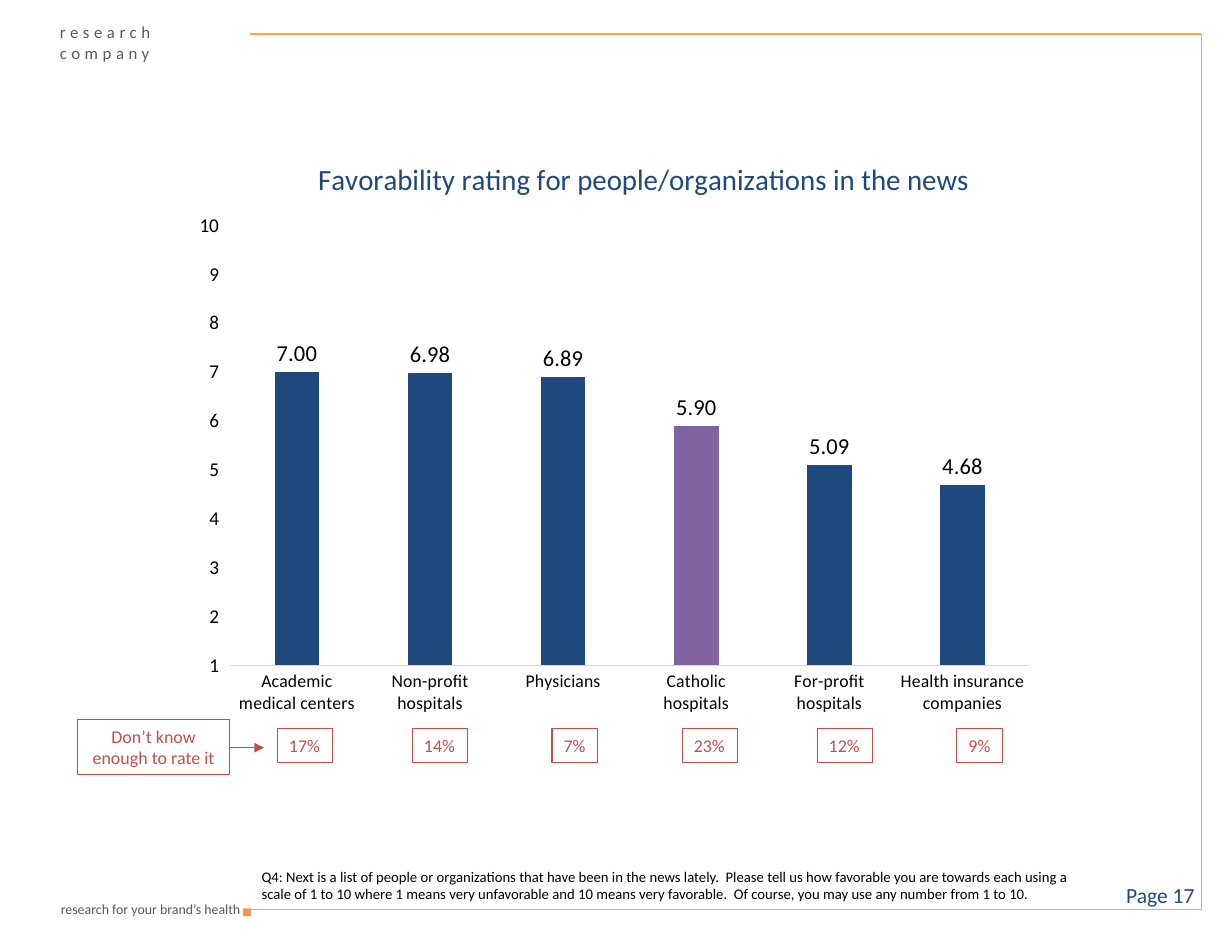
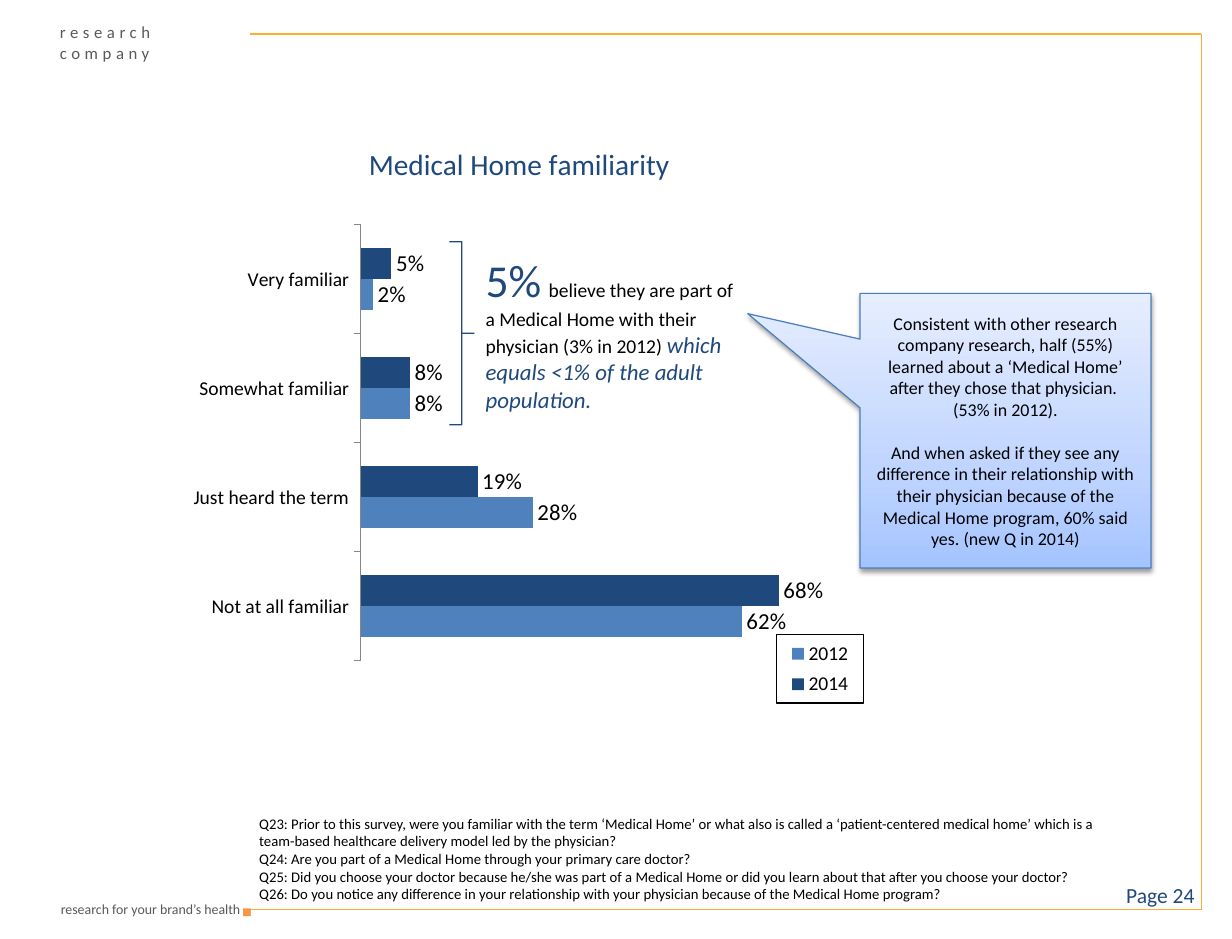
from dataclasses import dataclass

from pptx import Presentation
from pptx.chart.data import CategoryChartData
from pptx.dml.color import RGBColor
from pptx.enum.chart import XL_CHART_TYPE, XL_LABEL_POSITION, XL_LEGEND_POSITION, XL_TICK_MARK
from pptx.enum.shapes import MSO_CONNECTOR, MSO_SHAPE
from pptx.enum.text import MSO_ANCHOR, MSO_AUTO_SIZE, PP_ALIGN
from pptx.oxml import parse_xml
from pptx.oxml.ns import nsdecls, qn
from pptx.util import Inches, Pt

FONT = "Calibri"
NAVY, BLUE, PURPLE, RED = "1F497D", "4F81BD", "8064A2", "C0504D"
GOLD, ORANGE, GRAY, BLACK = "FFAC33", "F79646", "595959", "000000"
CALLOUT_STOPS = [(0, "A4C4FF"), (35, "BFD4FF"), (100, "E6EEFF")]
SMALL_INSETS = (0.09, 0.05, 0.09, 0.05)
NOTE_INSETS = (0.11, 0.05, 0.11, 0.05)
PAGE_INSETS = (0.11, 0.06, 0.11, 0.06)
DEFAULT_INSETS = (0.1, 0.05, 0.1, 0.05)


@dataclass
class Box:
    left: float
    top: float
    width: float
    height: float

    def lengths(self):
        return [Inches(value) for value in (self.left, self.top, self.width, self.height)]

    def inside(self, left, top, width, height):
        return Box(self.left + left, self.top + top, width, height)


PAGE = Box(0, 0, 10.5, 8)


def rgb(value):
    return RGBColor.from_string(value)


def apply_format(target, values):
    for name, value in values.items():
        if name == "color":
            target.color.rgb = rgb(value)
        else:
            setattr(target, name, value)


def font_format(size, color=BLACK, **extra):
    return {"name": FONT, "size": Pt(size), "color": color, **extra}


def style_line(line, color, width=0.75):
    apply_format(line, {"color": color, "width": Pt(width)})


def write_text(shape, paragraphs, insets=DEFAULT_INSETS, wrap=True, align=PP_ALIGN.LEFT,
               anchor=MSO_ANCHOR.TOP, grow=True, gaps=()):
    frame = shape.text_frame
    sides = ("margin_left", "margin_top", "margin_right", "margin_bottom")
    apply_format(frame, {
        "word_wrap": wrap,
        "vertical_anchor": anchor,
        "auto_size": MSO_AUTO_SIZE.SHAPE_TO_FIT_TEXT if grow else MSO_AUTO_SIZE.NONE,
        **{side: Inches(inset) for side, inset in zip(sides, insets)},
    })
    for index, runs in enumerate(paragraphs):
        paragraph = frame.add_paragraph() if index else frame.paragraphs[0]
        paragraph.alignment = align
        if index in gaps:
            paragraph.space_before = Pt(13.2)
        for text, values in runs:
            run = paragraph.add_run()
            run.text = text
            apply_format(run.font, values)


def add_text(slide, box, paragraphs, **options):
    shape = slide.shapes.add_textbox(*box.lengths())
    write_text(shape, paragraphs, **options)
    return shape


def add_outlined(slide, preset, box, color):
    shape = slide.shapes.add_shape(preset, *box.lengths())
    shape.shadow.inherit = False
    shape.fill.background()
    style_line(shape.line, color)
    return shape


def add_line(slide, start, end, color, arrow=False):
    points = [Inches(value) for value in (*start, *end)]
    connector = slide.shapes.add_connector(MSO_CONNECTOR.STRAIGHT, *points)
    style_line(connector.line, color)
    properties = connector._element.spPr
    if arrow:
        properties.find(qn("a:ln")).append(parse_xml(f'<a:tailEnd {nsdecls("a")} type="triangle"/>'))
    properties.append(parse_xml(f'<a:effectLst {nsdecls("a")}/>'))


def add_page_frame(slide, box, number):
    left, top = box.left + 2.13, box.top + 0.29
    right, bottom = box.left + 10.24, box.top + 7.75
    corners = [(left, top), (right, top), (right, bottom), (left, bottom)]
    for start, end in zip(corners, corners[1:]):
        add_line(slide, start, end, GOLD)
    small = {"insets": SMALL_INSETS, "wrap": False}
    add_text(slide, box.inside(1.97, 7.55, 0.28, 0.41), [[("▪", font_format(18.8, ORANGE))]], **small)
    add_text(slide, box.inside(0.42, 7.62, 1.72, 0.24),
             [[("research for your brand’s health", font_format(8.5, GRAY))]],
             align=PP_ALIGN.RIGHT, **small)
    name = add_text(slide, box.inside(0.42, 0.14, 1.77, 0.27),
                    [[("research company", font_format(10.3, GRAY))]], **small)
    name.text_frame.paragraphs[0].runs[0]._r.get_or_add_rPr().set("spc", "280")
    add_text(slide, box.inside(7.84, 7.41, 2.45, 0.43),
             [[(f"Page {number}", font_format(13.2, NAVY))]],
             insets=PAGE_INSETS, align=PP_ALIGN.RIGHT, anchor=MSO_ANCHOR.MIDDLE, grow=False)


def add_questions(slide, box, questions):
    add_text(slide, box, [[(question, font_format(9))] for question in questions], insets=NOTE_INSETS)


def set_layout(parent, position, index, inner=False):
    for old in parent.findall(qn("c:layout")):
        parent.remove(old)
    parts = '<c:layoutTarget val="inner"/>' if inner else ""
    parts += '<c:xMode val="edge"/><c:yMode val="edge"/>'
    for name, value in zip("xywh", position):
        parts += f'<c:{name} val="{value}"/>'
    parent.insert(index, parse_xml(
        f'<c:layout {nsdecls("c")}><c:manualLayout>{parts}</c:manualLayout></c:layout>'))


def add_bar_chart(slide, box, kind, title, title_position, plot, categories, series, gap, number_format):
    data = CategoryChartData()
    data.categories = categories
    for name, values, color in series:
        data.add_series(name, values)
    chart = slide.shapes.add_chart(kind, *box.lengths(), data).chart
    apply_format(chart.font, font_format(12))
    chart.has_legend = False
    chart.has_title = True
    title_frame = chart.chart_title.text_frame
    title_frame.text = title
    apply_format(title_frame.paragraphs[0].runs[0].font, font_format(18, NAVY, bold=False))
    set_layout(chart.chart_title._element, title_position, 1)
    set_layout(chart._chartSpace.chart.plotArea, plot, 0, inner=True)
    bars = chart.plots[0]
    apply_format(bars, {"gap_width": gap, "vary_by_categories": False, "has_data_labels": True})
    apply_format(bars.data_labels, {
        "show_value": True,
        "number_format": number_format,
        "number_format_is_linked": False,
        "position": XL_LABEL_POSITION.OUTSIDE_END,
    })
    apply_format(bars.data_labels.font, font_format(14))
    for bar_series, (name, values, color) in zip(bars.series, series):
        bar_series.invert_if_negative = False
        bar_series.format.fill.solid()
        bar_series.format.fill.fore_color.rgb = rgb(color)
    chart.value_axis.has_major_gridlines = False
    return chart


def add_favorability_chart(slide, box):
    categories = ["Academic medical centers", "Non-profit hospitals", "Physicians",
                  "Catholic hospitals", "For-profit hospitals", "Health insurance companies"]
    chart = add_bar_chart(
        slide, box, XL_CHART_TYPE.COLUMN_CLUSTERED,
        "Favorability rating for people/organizations in the news", (0.12, 0.07),
        (0.021, 0.181, 0.958, 0.678), categories,
        [("Series 1", [7, 6.98, 6.89, 5.9, 5.09, 4.68], NAVY)], 199, "0.00")
    highlight = chart.plots[0].series[0].points[categories.index("Catholic hospitals")].format.fill
    highlight.solid()
    highlight.fore_color.rgb = rgb(PURPLE)
    apply_format(chart.value_axis, {"minimum_scale": 1, "maximum_scale": 10, "major_unit": 1})
    apply_format(chart.value_axis.tick_labels, {"number_format": "0", "number_format_is_linked": False})
    apply_format(chart.value_axis.tick_labels.font, font_format(12))
    chart.value_axis.format.line.fill.background()
    chart.category_axis.major_tick_mark = XL_TICK_MARK.NONE
    apply_format(chart.category_axis.tick_labels.font, font_format(11))
    style_line(chart.category_axis.format.line, "D9D9D9")


def add_unsure_row(slide, box, shares):
    red = font_format(11, RED)
    label = add_outlined(slide, MSO_SHAPE.RECTANGLE, box.inside(0, 0, 1.3, box.height), RED)
    write_text(label, [[("Don’t know enough to rate it", red)]],
               align=PP_ALIGN.CENTER, anchor=MSO_ANCHOR.MIDDLE)
    pitch = 1.15
    for index, share in enumerate(shares):
        width = 0.47 if share >= 10 else 0.39
        place = box.inside(1.94 + index * pitch - width / 2, 0.08, width, 0.29)
        badge = add_outlined(slide, MSO_SHAPE.RECTANGLE, place, RED)
        write_text(badge, [[(f"{share}%", red)]], wrap=False)
    middle = box.top + 0.24
    add_line(slide, (box.left + 1.3, middle), (box.left + 1.59, middle), RED, arrow=True)


def add_familiarity_chart(slide, box):
    chart = add_bar_chart(
        slide, box, XL_CHART_TYPE.BAR_CLUSTERED, "Medical Home familiarity", (0.27, 0.02),
        (0.266, 0.17, 0.708, 0.755),
        ["Very familiar", "Somewhat familiar", "Just heard the term", "Not at all familiar"],
        [("2014", [0.05, 0.08, 0.19, 0.68], NAVY), ("2012", [0.02, 0.08, 0.28, 0.62], BLUE)],
        150, "0%")
    apply_format(chart.value_axis, {"minimum_scale": 0, "maximum_scale": 0.8, "visible": False})
    apply_format(chart.category_axis, {"reverse_order": True, "major_tick_mark": XL_TICK_MARK.OUTSIDE})
    apply_format(chart.category_axis.tick_labels.font, font_format(12))
    style_line(chart.category_axis.format.line, "868686")
    chart.has_legend = True
    legend = chart.legend
    apply_format(legend, {"position": XL_LEGEND_POSITION.BOTTOM, "include_in_layout": False})
    apply_format(legend.font, font_format(12))
    set_layout(legend._element, (0.865, 0.88, 0.125, 0.118), 1)
    legend._element.find(qn("c:overlay")).addnext(parse_xml(
        f'<c:spPr {nsdecls("c", "a")}><a:ln w="9525"><a:solidFill><a:srgbClr val="{BLACK}"/>'
        '</a:solidFill></a:ln></c:spPr>'))


def add_membership_remark(slide, box):
    brace = add_outlined(slide, MSO_SHAPE.RIGHT_BRACE, box.inside(0, 0, 0.21, box.height), NAVY)
    brace.adjustments[0] = 0
    brace.adjustments[1] = 0.5
    add_text(slide, box.inside(0.21, 0.04, 2.42, 1.48), [[
        ("5%", font_format(28, NAVY)),
        (" ", font_format(20)),
        ("believe they are part of a Medical Home with their physician (3% in 2012) ", font_format(12)),
        ("which equals <1% of the adult population.", font_format(14, NAVY, italic=True)),
    ]])


def add_callout(slide, box, paragraphs):
    callout = slide.shapes.add_shape(MSO_SHAPE.RECTANGULAR_CALLOUT, *box.lengths())
    callout.adjustments[0] = -0.886
    callout.adjustments[1] = -0.426
    stops = "".join(f'<a:gs pos="{place * 1000}"><a:srgbClr val="{color}"/></a:gs>'
                    for place, color in CALLOUT_STOPS)
    properties = callout._element.spPr
    properties.append(parse_xml(f'<a:gradFill {nsdecls("a")} rotWithShape="1"><a:gsLst>{stops}</a:gsLst>'
                                '<a:lin ang="16200000" scaled="0"/></a:gradFill>'))
    style_line(callout.line, "4B7EBC")
    callout.shadow.inherit = False
    properties.find(qn("a:effectLst")).append(parse_xml(
        f'<a:outerShdw {nsdecls("a")} blurRad="{Pt(3.1)}" dist="{Pt(1.6)}" dir="5400000" '
        f'rotWithShape="0"><a:srgbClr val="{BLACK}"><a:alpha val="38000"/></a:srgbClr></a:outerShdw>'))
    write_text(callout, [[(text, font_format(11))] for text in paragraphs],
               align=PP_ALIGN.CENTER, anchor=MSO_ANCHOR.MIDDLE, grow=False, gaps=(2,))


def build_favorability_slide(slide, box):
    add_page_frame(slide, box, 17)
    add_questions(slide, box.inside(2.12, 7.34, 7.3, 0.41), [
        "Q4: Next is a list of people or organizations that have been in the news lately.  Please tell us "
        "how favorable you are towards each using a scale of 1 to 10 where 1 means very unfavorable and 10 "
        "means very favorable.  Of course, you may use any number from 1 to 10."])
    add_favorability_chart(slide, box.inside(1.7, 0.92, 7.22, 5.53))
    add_unsure_row(slide, box.inside(0.66, 6.13, 7.87, 0.47), [17, 14, 7, 23, 12, 9])


def build_familiarity_slide(slide, box):
    add_page_frame(slide, box, 24)
    add_familiarity_chart(slide, box.inside(1.5, 1.08, 5.92, 4.92))
    add_membership_remark(slide, box.inside(3.83, 2.06, 2.63, 1.56))
    add_callout(slide, box.inside(7.33, 2.5, 2.48, 2.34), [
        "Consistent with other research company research, half (55%) learned about a ‘Medical Home’ "
        "after they chose that physician. ",
        "(53% in 2012).",
        "And when asked if they see any difference in their relationship with their physician because "
        "of the Medical Home program, 60% said yes. (new Q in 2014)"])
    add_questions(slide, box.inside(2.1, 6.89, 7.4, 0.86), [
        "Q23: Prior to this survey, were you familiar with the term ‘Medical Home’ or what also is called "
        "a ‘patient-centered medical home’ which is a team-based healthcare delivery model led by the physician?",
        "Q24: Are you part of a Medical Home through your primary care doctor?",
        "Q25: Did you choose your doctor because he/she was part of a Medical Home or did you learn about "
        "that after you choose your doctor?",
        "Q26: Do you notice any difference in your relationship with your physician because of the "
        "Medical Home program?"])


def main():
    presentation = Presentation()
    presentation.slide_width = Inches(PAGE.width)
    presentation.slide_height = Inches(PAGE.height)
    for build in (build_favorability_slide, build_familiarity_slide):
        build(presentation.slides.add_slide(presentation.slide_layouts[6]), PAGE)
    presentation.save("out.pptx")


if __name__ == "__main__":
    main()
